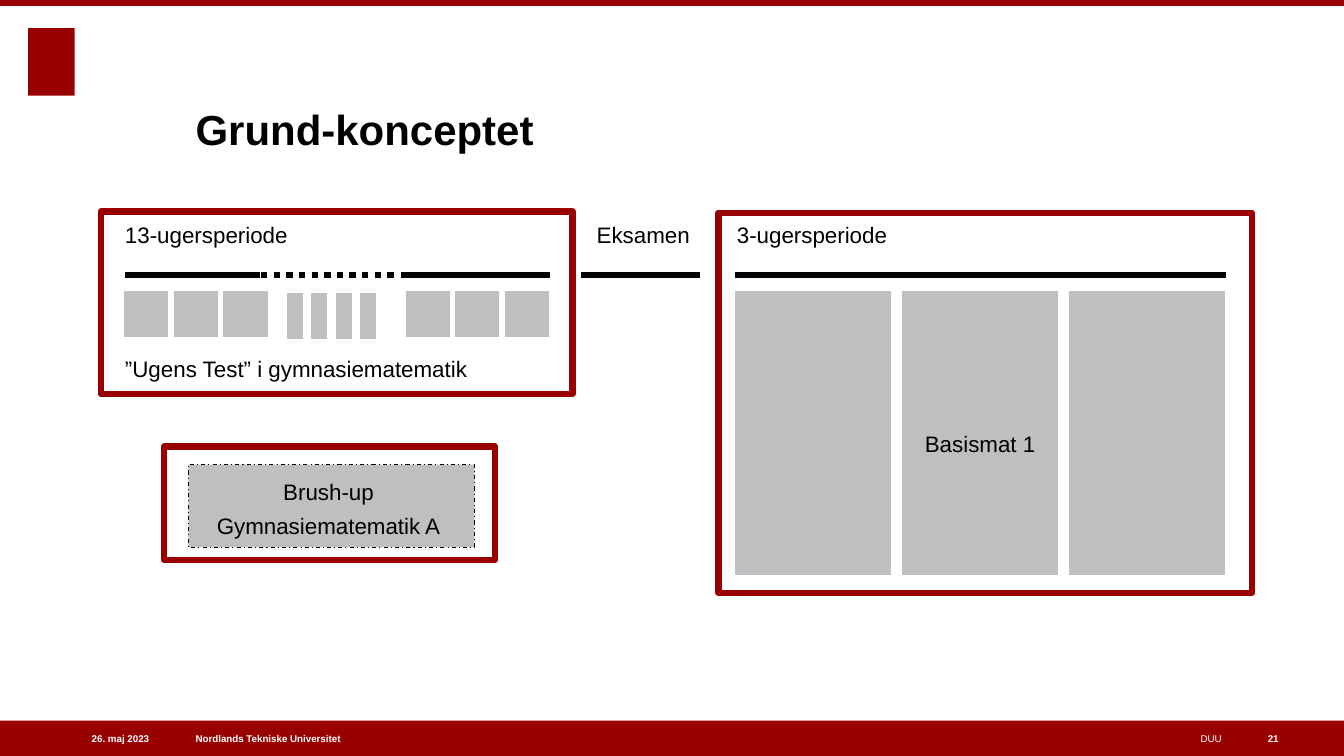
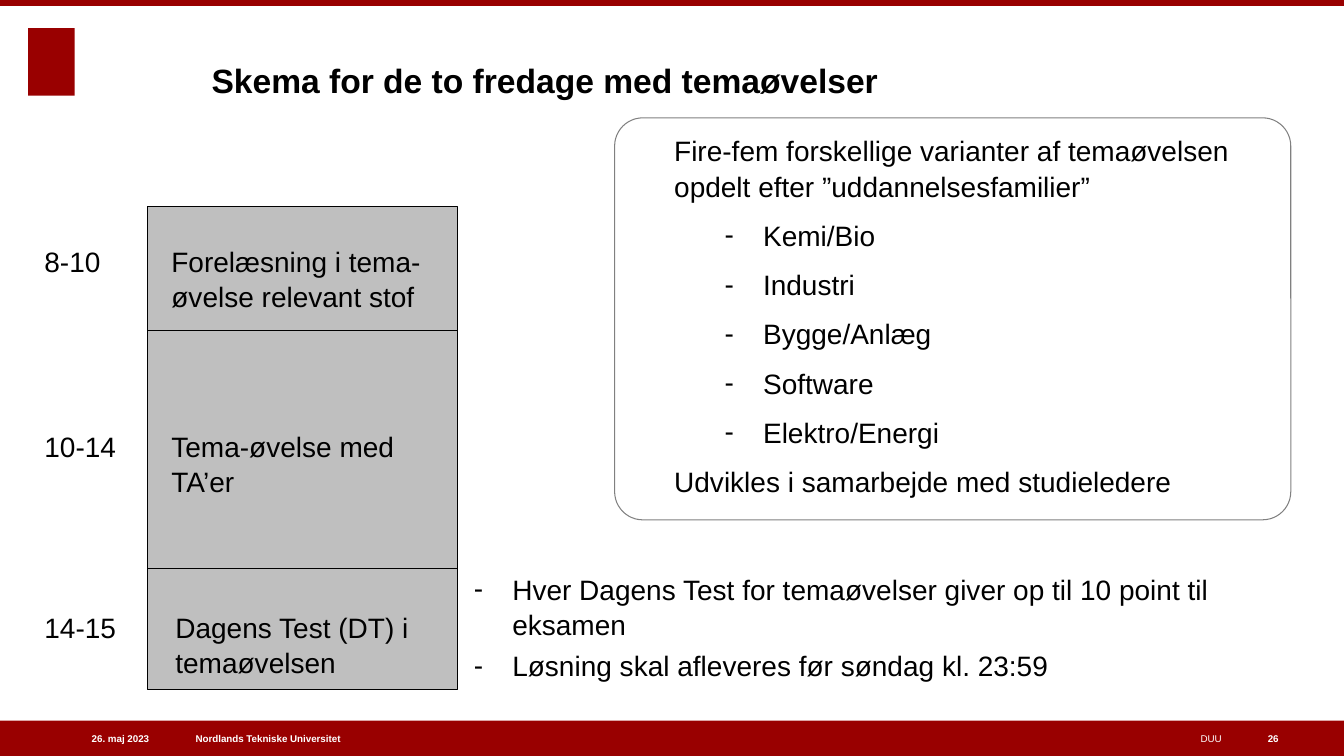
from dataclasses import dataclass

from lxml import etree
from pptx import Presentation
from pptx.dml.color import RGBColor
from pptx.enum.dml import MSO_LINE
from pptx.enum.shapes import MSO_CONNECTOR, MSO_SHAPE
from pptx.enum.text import MSO_ANCHOR, MSO_AUTO_SIZE, PP_ALIGN
from pptx.oxml.ns import qn
from pptx.util import Cm, Pt

RECTANGLE = MSO_SHAPE.RECTANGLE
ROUNDED = MSO_SHAPE.ROUNDED_RECTANGLE
STRAIGHT = MSO_CONNECTOR.STRAIGHT
DOTTED = MSO_LINE.ROUND_DOT
DASH_DOT = MSO_LINE.DASH_DOT
LEFT, CENTER, RIGHT = PP_ALIGN.LEFT, PP_ALIGN.CENTER, PP_ALIGN.RIGHT
TOP, MIDDLE, BOTTOM = MSO_ANCHOR.TOP, MSO_ANCHOR.MIDDLE, MSO_ANCHOR.BOTTOM
NO_AUTOFIT = MSO_AUTO_SIZE.NONE


@dataclass(frozen=True)
class Theme:
    red: RGBColor = RGBColor(0x99, 0x00, 0x00)
    grey: RGBColor = RGBColor(0xBF, 0xBF, 0xBF)
    outline: RGBColor = RGBColor(0x80, 0x80, 0x80)
    black: RGBColor = RGBColor(0x00, 0x00, 0x00)
    white: RGBColor = RGBColor(0xFF, 0xFF, 0xFF)
    font: str = "Arial"
    title: float = 30
    small_title: float = 24
    body: float = 20
    label: float = 16
    footer: float = 7
    thick: float = 4.5
    thin: float = 0.75
    line_spacing: float = 1.05
    space: float = 4.3
    wide_space: float = 10


THEME = Theme()
WIDTH, HEIGHT = 33.87, 19.05
FOOTER_TOP, FOOTER_HEIGHT = 18.16, 0.89
DASH_INDENT = 0.97


def apply(target, values):
    for name, value in values.items():
        setattr(target, name, value)


def lengths(box):
    return [Cm(value) for value in box]


def place(shape, box):
    apply(shape, dict(zip(("left", "top", "width", "height"), lengths(box))))


def format_frame(frame, anchor=TOP, inset=(0, 0)):
    horizontal, vertical = lengths(inset)
    apply(frame, {
        "word_wrap": True, "auto_size": NO_AUTOFIT, "vertical_anchor": anchor,
        "margin_left": horizontal, "margin_right": horizontal,
        "margin_top": vertical, "margin_bottom": vertical,
    })


def write(paragraph, text, size, color=THEME.black, bold=False, align=LEFT, space=THEME.space):
    run = paragraph.add_run()
    run.text = text
    apply(run.font, {"name": THEME.font, "size": Pt(size), "bold": bold})
    run.font.color.rgb = color
    apply(paragraph, {
        "alignment": align, "space_before": Pt(space), "line_spacing": THEME.line_spacing,
    })


def set_bullet(paragraph, indent, dashed):
    properties = paragraph._p.get_or_add_pPr()
    properties.set("marL", str(Cm(indent)))
    properties.set("indent", str(-Cm(DASH_INDENT) if dashed else 0))
    if dashed:
        etree.SubElement(properties, qn("a:buChar")).set("char", "-")
    else:
        etree.SubElement(properties, qn("a:buNone"))


def paragraphs_for(frame, count):
    return [frame.paragraphs[0]] + [frame.add_paragraph() for _ in range(count - 1)]


def add_text(slide, box, text, size, anchor=TOP, **style):
    shape = slide.shapes.add_textbox(*lengths(box))
    format_frame(shape.text_frame, anchor)
    lines = text.split("\n")
    for paragraph, line in zip(paragraphs_for(shape.text_frame, len(lines)), lines):
        write(paragraph, line, size, **style)
    return shape


def fill_title(slide, box, text, size, anchor):
    title = slide.shapes.title
    place(title, box)
    format_frame(title.text_frame, anchor)
    write(title.text_frame.paragraphs[0], text, size, bold=True)


def fill_list(placeholder, box, items, space, inset=(0, 0)):
    place(placeholder, box)
    frame = placeholder.text_frame
    format_frame(frame, inset=inset)
    for paragraph, (text, level, indent, dashed) in zip(paragraphs_for(frame, len(items)), items):
        paragraph.level = level
        write(paragraph, text, THEME.body, space=space)
        set_bullet(paragraph, indent, dashed)


def add_box(slide, box, fill=None, line=None, width=THEME.thin, dash=None, kind=RECTANGLE):
    shape = slide.shapes.add_shape(kind, *lengths(box))
    shape.shadow.inherit = False
    if fill is None:
        shape.fill.background()
    else:
        shape.fill.solid()
        shape.fill.fore_color.rgb = fill
    if line is None:
        shape.line.fill.background()
    else:
        shape.line.color.rgb = line
        apply(shape.line, {"width": Pt(width), "dash_style": dash})
    return shape


def add_row(slide, box, step, count):
    left, top, width, height = box
    for index in range(count):
        add_box(slide, (left + index * step, top, width, height), THEME.grey, THEME.white)


def add_rule(slide, start, end, top, width=THEME.thick, dash=None):
    rule = slide.shapes.add_connector(STRAIGHT, *lengths((start, top, end, top)))
    rule.line.color.rgb = THEME.black
    apply(rule.line, {"width": Pt(width), "dash_style": dash})
    etree.SubElement(rule.element.spPr, qn("a:effectLst"))


def add_footer_text(slide, left, width, text, bold=True, align=LEFT):
    return add_text(slide, (left, FOOTER_TOP, width, FOOTER_HEIGHT), text, THEME.footer,
                    MIDDLE, color=THEME.white, bold=bold, align=align, space=0)


def build_master(presentation, slide):
    shapes = [
        add_box(slide, (0, 0, WIDTH, 0.15), THEME.red),
        add_box(slide, (0.71, 0.71, 1.17, 1.7), THEME.red),
        add_box(slide, (0, FOOTER_TOP, WIDTH, FOOTER_HEIGHT), THEME.red),
        add_footer_text(slide, 0.69, 3.07, "26. maj 2023", align=RIGHT),
        add_footer_text(slide, 4.93, 9.45, "Nordlands Tekniske Universitet"),
        add_footer_text(slide, 15.52, 15.27, "DUU", bold=False, align=RIGHT),
    ]
    tree = presentation.slide_master.shapes.element
    for number, shape in enumerate(shapes, start=100):
        shape.element.nvSpPr.cNvPr.set("id", str(number))
        tree.append(shape.element)


def build_concept(slide):
    fill_title(slide, (4.93, 1.19, 25.86, 2.69), "Grund-konceptet", THEME.title, BOTTOM)
    add_footer_text(slide, 31.95, 1.19, "21")

    for start, end, dash in [
        (3.15, 6.55, None), (6.58, 9.98, DOTTED), (10.11, 13.87, None),
        (14.63, 17.63, None), (18.52, 30.89, None),
    ]:
        add_rule(slide, start, end, 6.93, dash=dash)

    add_row(slide, (3.12, 7.32, 1.14, 1.19), 1.25, 3)
    add_row(slide, (7.21, 7.37, 0.43, 1.19), 0.62, 4)
    add_row(slide, (10.21, 7.32, 1.14, 1.19), 1.25, 3)
    add_row(slide, (18.52, 7.32, 3.96, 7.19), 4.2, 3)
    add_box(slide, (4.75, 11.71, 7.21, 2.08), THEME.grey, THEME.black, dash=DASH_DOT)

    for box in [
        (2.54, 5.33, 11.89, 4.6), (4.14, 11.25, 8.33, 2.87), (18.11, 5.36, 13.44, 9.58),
    ]:
        add_box(slide, box, line=THEME.red, width=THEME.thick)

    for box, text, align in [
        ((3.15, 5.54, 6, 0.69), "13-ugersperiode", LEFT),
        ((14.43, 5.54, 3.56, 0.69), "Eksamen", CENTER),
        ((18.57, 5.54, 6, 0.69), "3-ugersperiode", LEFT),
        ((3.15, 8.92, 10, 0.69), "”Ugens Test” i gymnasiematematik", LEFT),
        ((22.72, 10.8, 3.96, 0.69), "Basismat 1", CENTER),
        ((4.75, 12.01, 7.06, 1.5), "Brush-up\nGymnasiematematik A", CENTER),
    ]:
        add_text(slide, box, text, THEME.label, align=align)


def build_schedule(slide):
    fill_title(slide, (5.33, 1.47, 23.37, 1.02), "Skema for de to fredage med temaøvelser",
               THEME.small_title, TOP)
    add_footer_text(slide, 31.95, 1.19, "26")

    add_box(slide, (3.73, 5.21, 7.8, 12.17), THEME.grey, THEME.black)
    for top in (8.33, 14.33):
        add_rule(slide, 3.73, 11.53, top, THEME.thin)
    for top, hours, left, width, activity in [
        (6.12, "8-10", 4.32, 6.6, "Forelæsning i tema-øvelse relevant stof"),
        (10.77, "10-14", 4.32, 5.66, "Tema-øvelse med TA’er"),
        (15.34, "14-15", 4.42, 6.5, "Dagens Test (DT) i temaøvelsen"),
    ]:
        add_text(slide, (1.12, top, 2.4, 0.86), hours, THEME.body)
        add_text(slide, (left, top, width, 1.72), activity, THEME.body)

    add_box(slide, (15.49, 2.97, 17.04, 10.13), line=THEME.outline,
            kind=ROUNDED).adjustments[0] = 0.07
    families = ["Kemi/Bio", "Industri", "Bygge/Anlæg", "Software", "Elektro/Energi"]
    variants = [
        ("Fire-fem forskellige varianter af temaøvelsen opdelt efter ”uddannelsesfamilier”",
         0, 0, False),
        *[(family, 1, 2.24, True) for family in families],
        ("Udvikles i samarbejde med studieledere", 0, 0, False),
    ]
    rules = [
        (text, 0, DASH_INDENT, True) for text in (
            "Hver Dagens Test for temaøvelser giver op til 10 point til eksamen",
            "Løsning skal afleveres før søndag kl. 23:59",
        )
    ]
    _, variant_list, rule_list = slide.placeholders
    fill_list(variant_list, (16.74, 3.2, 15.04, 9.8), variants, THEME.wide_space, (0.25, 0.13))
    fill_list(rule_list, (11.94, 14.38, 21.23, 3.71), rules, THEME.space)


def main():
    presentation = Presentation()
    apply(presentation, {"slide_width": Cm(WIDTH), "slide_height": Cm(HEIGHT)})
    layouts = presentation.slide_layouts
    concept = presentation.slides.add_slide(layouts.get_by_name("Title Only"))
    schedule = presentation.slides.add_slide(layouts.get_by_name("Two Content"))
    build_master(presentation, concept)
    build_concept(concept)
    build_schedule(schedule)
    presentation.save("out.pptx")


if __name__ == "__main__":
    main()
